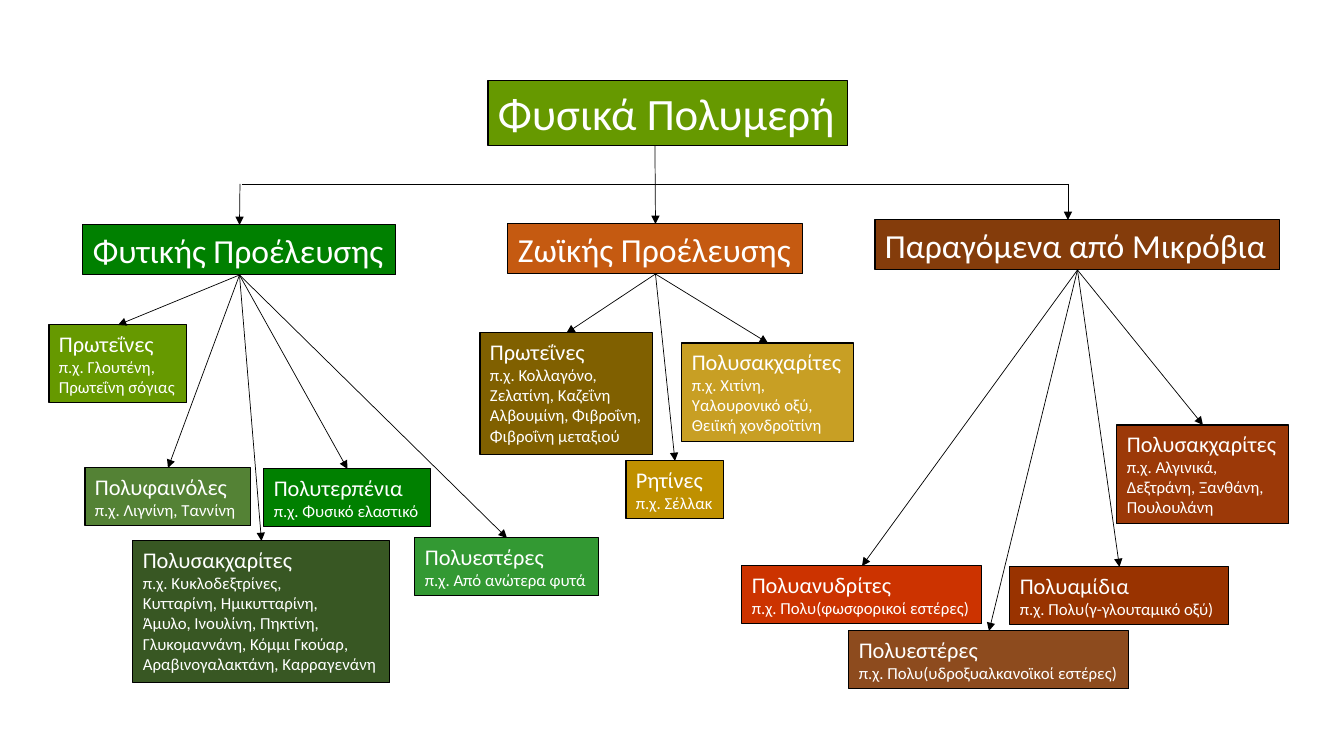
from lxml.etree import SubElement
from pptx import Presentation
from pptx.dml.color import RGBColor
from pptx.enum.shapes import MSO_CONNECTOR as Link, MSO_SHAPE as Preset
from pptx.enum.text import MSO_ANCHOR as Anchor, MSO_AUTO_SIZE as AutoSize, PP_ALIGN as Align
from pptx.oxml.ns import qn
from pptx.util import Emu, Pt

SCALE = 914400 / 100.8
TOP, BOTTOM = 0, 2
WHITE, BLACK = "FFFFFF", "000000"

deck = Presentation()
deck.slide_width, deck.slide_height = Emu(12192000), Emu(6858000)
page = deck.slides.add_slide(deck.slide_layouts[6])


def color(code):
    return RGBColor.from_string(code)


def add_box(place, fill, lines, sizes, opacity=100, wrap=False, align=Align.LEFT):
    box = page.shapes.add_shape(Preset.RECTANGLE, *[Emu(round(n * SCALE)) for n in place])
    box.shadow.inherit = False
    box.fill.solid()
    box.fill.fore_color.rgb = color(fill)
    if opacity < 100:
        shade = box._element.spPr.find(qn("a:solidFill"))[0]
        SubElement(shade, qn("a:alpha"), val=str(opacity * 1000))
    box.line.color.rgb = color(BLACK)
    box.line.width = Pt(0.75)
    frame = box.text_frame
    frame_format = {
        "word_wrap": wrap,
        "auto_size": AutoSize.SHAPE_TO_FIT_TEXT,
        "vertical_anchor": Anchor.TOP,
    }
    for name, value in frame_format.items():
        setattr(frame, name, value)
    for index, line in enumerate(lines):
        para = frame.add_paragraph() if index else frame.paragraphs[0]
        para.alignment = align
        span = para.add_run()
        span.text = line
        span.font.color.rgb = color(WHITE)
        for name, value in {"name": "Calibri", "size": Pt(sizes[min(index, 1)])}.items():
            setattr(span.font, name, value)
    return box


def add_line(start=(0, 0), end=(0, 0), source=None, target=None, arrow=True):
    points = [Emu(round(n * SCALE)) for n in (*start, *end)]
    line = page.shapes.add_connector(Link.STRAIGHT, *points)
    if source is not None:
        line.begin_connect(source, BOTTOM)
    if target is not None:
        line.end_connect(target, TOP)
    line.line.color.rgb = color(BLACK)
    line.line.width = Pt(0.5)
    if arrow:
        SubElement(line.line._get_or_add_ln(), qn("a:tailEnd"), type="triangle")
    SubElement(line._element.spPr, qn("a:effectLst"))


FILLED = {"wrap": True}
JUSTIFIED = {"wrap": True, "align": Align.JUSTIFY}

branches = [
    ((83, 225, 313, 50), "008000", "Φυτικής Προέλευσης", [
        ((49, 325, 138, 78), "669900",
         ["Πρωτεΐνες", "π.χ. Γλουτένη,", "Πρωτεΐνη σόγιας"], {}),
        ((85, 468, 166, 58), "548235",
         ["Πολυφαινόλες", "π.χ. Λιγνίνη, Ταννίνη"], FILLED),
        ((133, 541, 257, 142), "385723",
         ["Πολυσακχαρίτες", "π.χ. Κυκλοδεξτρίνες,", "Κυτταρίνη, Ημικυτταρίνη,",
          "Άμυλο, Ινουλίνη, Πηκτίνη,", "Γλυκομαννάνη, Κόμμι Γκούαρ,",
          "Αραβινογαλακτάνη, Καρραγενάνη"], {}),
        ((264, 469, 167, 58), "008000",
         ["Πολυτερπένια", "π.χ. Φυσικό ελαστικό"], {}),
        ((415, 538, 184, 58), "339933",
         ["Πολυεστέρες", "π.χ. Από ανώτερα φυτά"], {}),
    ]),
    ((508, 224, 295, 50), "C55A11", "Ζωϊκής Προέλευσης", [
        ((480, 333, 173, 122), "806000",
         ["Πρωτεΐνες", "π.χ. Κολλαγόνο,", "Ζελατίνη, Καζεΐνη",
          "Αλβουμίνη, Φιβροΐνη,", "Φιβροΐνη μεταξιού"], {}),
        ((626, 461, 98, 58), "BF9000",
         ["Ρητίνες", "π.χ. Σέλλακ"], {}),
        ((682, 343, 172, 99), "BF9000",
         ["Πολυσακχαρίτες", "π.χ. Χιτίνη,", "Υαλουρονικό οξύ,",
          "Θειϊκή χονδροϊτίνη"], {"opacity": 86}),
    ]),
    ((875, 220, 405, 50), "843C0B", "Παραγόμενα από Μικρόβια", [
        ((742, 566, 240, 58), "CC3300",
         ["Πολυανυδρίτες", "π.χ. Πολυ(φωσφορικοί εστέρες)"], {}),
        ((849, 631, 280, 58), "843C0B",
         ["Πολυεστέρες", "π.χ. Πολυ(υδροξυαλκανοϊκοί εστέρες)"],
         {"opacity": 92, **JUSTIFIED}),
        ((1010, 567, 219, 58), "993300",
         ["Πολυαμίδια", "π.χ. Πολυ(γ-γλουταμικό οξύ)"], JUSTIFIED),
        ((1117, 425, 172, 99), "993300",
         ["Πολυσακχαρίτες", "π.χ. Αλγινικά,", "Δεξτράνη, Ξανθάνη,", "Πουλουλάνη"],
         {"opacity": 97, **JUSTIFIED}),
    ]),
]

add_box((488, 81, 360, 65), "669900", ["Φυσικά Πολυμερή"], [32])

origins = []
for place, fill, title, families in branches:
    origin = add_box(place, fill, [title], [24])
    origins.append(origin)
    for family_place, family_fill, lines, options in families:
        family = add_box(family_place, family_fill, lines, [16, 12], **options)
        add_line(source=origin, target=family)

plant, animal, microbe = origins
add_line((242, 184), (1068, 184), arrow=False)
add_line((240, 184), target=plant)
add_line((655, 146), target=animal)
add_line((1068, 184), (1068, 220))

deck.save("out.pptx")
